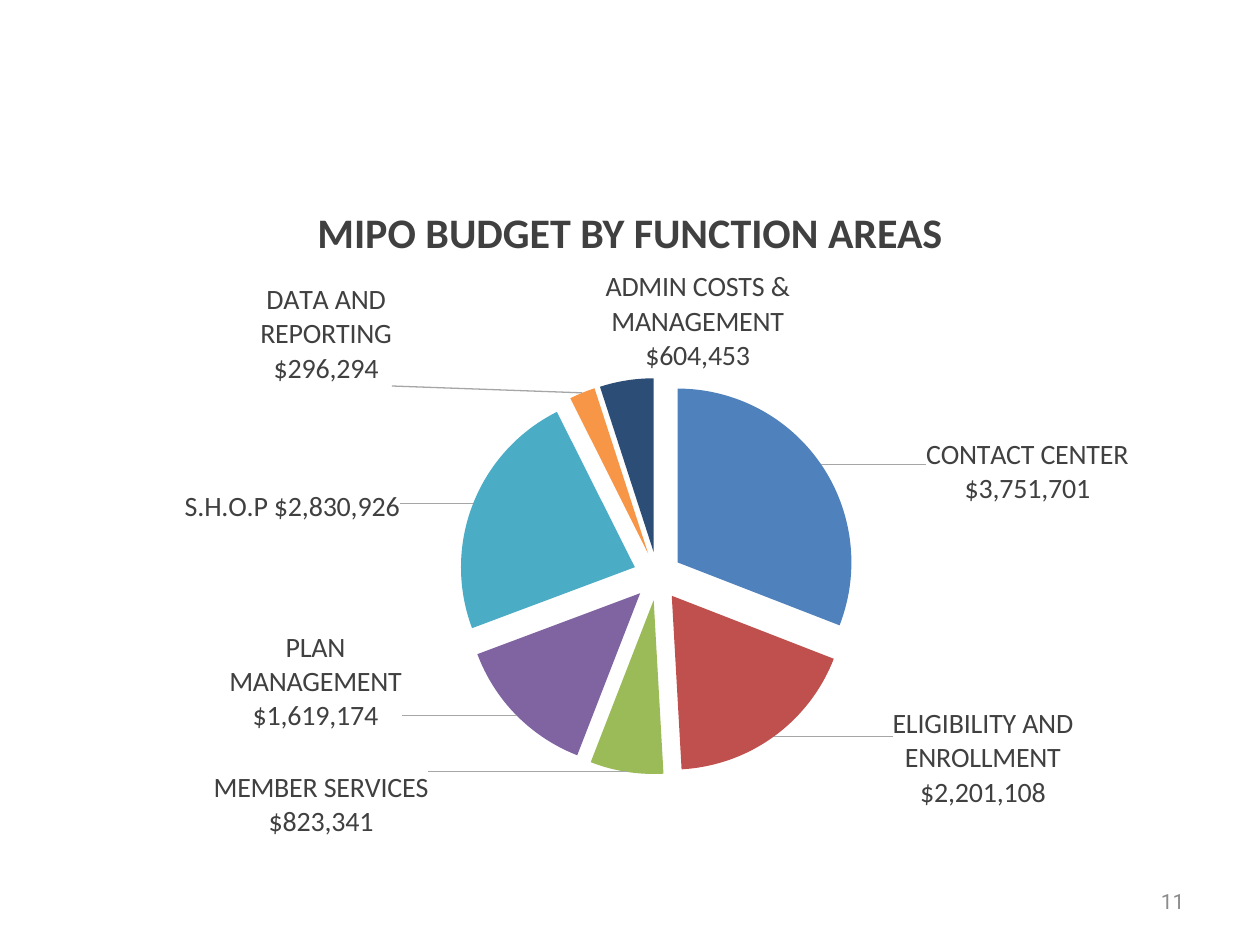
import pptx
import pptx.chart.data
import pptx.dml.color
import pptx.enum.chart
import pptx.enum.text
import pptx.oxml
import pptx.oxml.ns
import pptx.util
from pptx.util import Cm


def style_font(font, name, size, color, bold=False):
    font.name = name
    font.size = pptx.util.Pt(size)
    font.bold = bold
    font.color.rgb = pptx.dml.color.RGBColor.from_string(color)


def chart_xml(content):
    return pptx.oxml.parse_xml(content.replace(">", f" {pptx.oxml.ns.nsdecls('c', 'a')}>", 1))


presentation = pptx.Presentation()
presentation.slide_width = Cm(25.4)
presentation.slide_height = Cm(19.05)
slide = presentation.slides.add_slide(presentation.slide_layouts[5])

# Title
title = slide.shapes.title
title.left, title.top, title.width, title.height = Cm(1.27), Cm(4.45), Cm(22.86), Cm(0.43)
title.text_frame.text = "MIPO BUDGET BY FUNCTION AREAS"
title.text_frame.vertical_anchor = pptx.enum.text.MSO_ANCHOR.MIDDLE
paragraph = title.text_frame.paragraphs[0]
paragraph.alignment = pptx.enum.text.PP_ALIGN.CENTER
style_font(paragraph.runs[0].font, "Calibri", 24, "404040", True)

# Function areas: label, share, colour, label offset as a fraction of the chart
areas = [
    ("CONTACT CENTER $3,751,701", 0.309, "4F81BD", 0.085, 0.074),
    ("ELIGIBILITY AND ENROLLMENT $2,201,108", 0.182, "C0504D", 0.098, -0.056),
    ("MEMBER SERVICES $823,341", 0.068, "9BBB59", -0.169, -0.013),
    ("PLAN MANAGEMENT $1,619,174", 0.134, "8064A2", -0.094, -0.144),
    ("S.H.O.P $2,830,926", 0.233, "4BACC6", -0.057, 0.037),
    ("DATA AND REPORTING $296,294", 0.024, "F79646", -0.161, 0),
    ("ADMIN COSTS & MANAGEMENT $604,453", 0.05, "2C4D75", 0.141, 0),
]

# Pie chart
chart_data = pptx.chart.data.CategoryChartData(number_format="0.0%")
chart_data.categories = [str(number) for number in range(1, len(areas) + 1)]
chart_data.add_series("Series 1", [area[1] for area in areas])
chart = slide.shapes.add_chart(
    pptx.enum.chart.XL_CHART_TYPE.PIE, Cm(1.27), Cm(5.08), Cm(23.5), Cm(12.57), chart_data
).chart
chart.has_legend = False
chart.has_title = False
style_font(chart.font, "Roboto", 10, "000000")
plot = chart.plots[0]
plot.vary_by_categories = True
series = plot.series[0]

# Labels shared by all slices, with leader lines
labels = series.data_labels
labels.show_value = True
labels.number_format = "0.0%"
labels.number_format_is_linked = False
labels.position = pptx.enum.chart.XL_LABEL_POSITION.OUTSIDE_END
style_font(labels.font, "Calibri", 16, "404040")
for element in labels._element.findall(pptx.oxml.ns.qn("c:showLeaderLines")):
    labels._element.remove(element)
labels._element.append(chart_xml('<c:showLeaderLines val="1"></c:showLeaderLines>'))
labels._element.append(chart_xml(
    '<c:leaderLines><c:spPr><a:ln w="9525"><a:solidFill><a:srgbClr val="A6A6A6"/>'
    "</a:solidFill></a:ln></c:spPr></c:leaderLines>"))

# Slice colours and label wording
for index, (wording, share, color, offset_x, offset_y) in enumerate(areas):
    point = series.points[index]
    point.format.fill.solid()
    point.format.fill.fore_color.rgb = pptx.dml.color.RGBColor.from_string(color)
    label = point.data_label
    label.text_frame.text = wording
    style_font(label.text_frame.paragraphs[0].runs[0].font, "Calibri", 16, "404040")
    label.position = pptx.enum.chart.XL_LABEL_POSITION.OUTSIDE_END
    label_element = labels._element.findall(pptx.oxml.ns.qn("c:dLbl"))[index]
    label_element.insert(1, chart_xml(
        f'<c:layout><c:manualLayout><c:x val="{offset_x}"/><c:y val="{offset_y}"/>'
        "</c:manualLayout></c:layout>"))

# Gap between slices and place of the pie
first_point = series._element.find(pptx.oxml.ns.qn("c:dPt"))
first_point.addprevious(chart_xml('<c:explosion val="14"></c:explosion>'))
plot_area = plot._element.getparent()
for element in plot_area.findall(pptx.oxml.ns.qn("c:layout")):
    plot_area.remove(element)
plot_area.insert(0, chart_xml(
    '<c:layout><c:manualLayout><c:layoutTarget val="inner"/>'
    '<c:xMode val="edge"/><c:yMode val="edge"/><c:x val="0.34"/><c:y val="0.2"/>'
    '<c:w val="0.34"/><c:h val="0.64"/></c:manualLayout></c:layout>'))

# Slide number
number_box = slide.shapes.add_textbox(Cm(18.21), Cm(17.65), Cm(5.92), Cm(1.02))
number_box.text_frame.word_wrap = True
number_box.text_frame.vertical_anchor = pptx.enum.text.MSO_ANCHOR.MIDDLE
number_box.text_frame.text = "11"
paragraph = number_box.text_frame.paragraphs[0]
paragraph.alignment = pptx.enum.text.PP_ALIGN.RIGHT
style_font(paragraph.runs[0].font, "Roboto", 12, "8C8C8C")

presentation.save("out.pptx")
